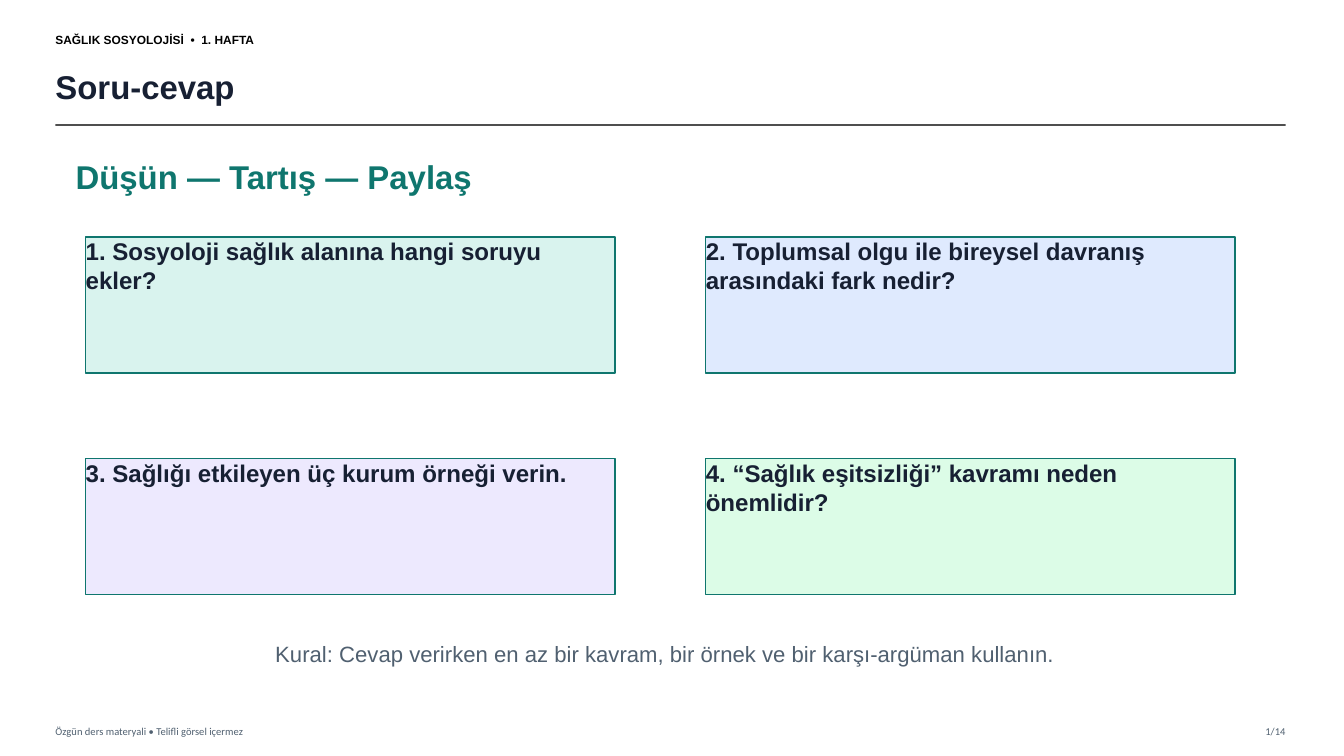
import pptx
import pptx.util
import pptx.dml.color
import pptx.enum.shapes
import pptx.enum.text
import pptx.oxml.ns
import lxml.etree

RGB = pptx.dml.color.RGBColor
ALIGN = pptx.enum.text.PP_ALIGN
ANCHOR = pptx.enum.text.MSO_ANCHOR
qn = pptx.oxml.ns.qn

BLACK = RGB(0x00, 0x00, 0x00)
NAVY = RGB(0x17, 0x20, 0x33)
TEAL = RGB(0x0F, 0x76, 0x6E)
SLATE = RGB(0x50, 0x60, 0x70)
GRAY = RGB(0x33, 0x33, 0x33)
MINT = RGB(0xD9, 0xF3, 0xEE)
BLUE = RGB(0xDF, 0xEA, 0xFE)
LILAC = RGB(0xED, 0xE9, 0xFE)
GREEN = RGB(0xDC, 0xFC, 0xE7)

# Formats: font name, size in points, weight and colour
STYLES = {
    "course": {"name": "Arial", "size": 8.5, "bold": True, "color": BLACK},
    "title": {"name": "Arial", "size": 23.5, "bold": True, "color": NAVY},
    "head": {"name": "Arial", "size": 23.5, "bold": True, "color": TEAL},
    "card": {"name": "Arial", "size": 17.2, "bold": True, "color": NAVY},
    "rule": {"name": "Arial", "size": 15.8, "bold": False, "color": SLATE},
    "foot": {"name": "Calibri", "size": 7.5, "bold": False, "color": SLATE},
}

# Labels: text, box in px, style, alignment, anchor
LABELS = [
    ("SAĞLIK SOSYOLOJİSİ  •  1. HAFTA", (55, 25, 360, 28),
     "course", ALIGN.LEFT, ANCHOR.MIDDLE),
    ("Soru-cevap", (55, 58, 1195, 55), "title", ALIGN.LEFT, ANCHOR.MIDDLE),
    ("Özgün ders materyali • Telifli görsel içermez", (55, 714, 600, 22),
     "foot", ALIGN.LEFT, ANCHOR.MIDDLE),
    ("1/14", (1210, 714, 65, 22), "foot", ALIGN.RIGHT, ANCHOR.MIDDLE),
    ("Düşün — Tartış — Paylaş", (75, 155, 570, 50),
     "head", ALIGN.LEFT, ANCHOR.TOP),
    ("Kural: Cevap verirken en az bir kavram, bir örnek ve bir "
     "karşı-argüman kullanın.", (100, 635, 1120, 35),
     "rule", ALIGN.CENTER, ANCHOR.TOP),
]

# Question cards, row by row
CARDS = [
    ("1. Sosyoloji sağlık alanına hangi soruyu ekler?", MINT),
    ("2. Toplumsal olgu ile bireysel davranış arasındaki fark nedir?", BLUE),
    ("3. Sağlığı etkileyen üç kurum örneği verin.", LILAC),
    ("4. “Sağlık eşitsizliği” kavramı neden önemlidir?", GREEN),
]
COLS = 2
LEFT, TOP = 85, 235
WIDE, HIGH = 525, 135
STEP_X, STEP_Y = 615, 220


def px(*vals):
    """Turn px (100 to the inch) into EMU."""
    return [pptx.util.Emu(v * 9144) for v in vals]


def write(shape, text, style, align, anchor):
    frame = shape.text_frame
    margins = dict.fromkeys(
        ("margin_left", "margin_top", "margin_right", "margin_bottom"), 0)
    for key, val in {**margins, "word_wrap": True,
                     "vertical_anchor": anchor}.items():
        setattr(frame, key, val)
    para = frame.paragraphs[0]
    para.alignment = align
    run = para.add_run()
    run.text = text
    for key, val in STYLES[style].items():
        if key == "color":
            run.font.color.rgb = val
        else:
            setattr(run.font, key,
                    pptx.util.Pt(val) if key == "size" else val)


def add_rule(slide):
    line = slide.shapes.add_connector(
        pptx.enum.shapes.MSO_CONNECTOR.STRAIGHT, *px(55, 124, 1275, 124))
    line.line.width = pptx.util.Pt(1.2)
    line.line.color.rgb = GRAY
    props = line._element.spPr
    # 85% opacity, no shadow
    tint = props.find(".//" + qn("a:srgbClr"))
    lxml.etree.SubElement(tint, qn("a:alpha")).set("val", "85000")
    lxml.etree.SubElement(props, qn("a:effectLst"))


def add_card(slide, num, text, fill):
    row, col = divmod(num, COLS)
    box = px(LEFT + col * STEP_X, TOP + row * STEP_Y, WIDE, HIGH)
    card = slide.shapes.add_shape(
        pptx.enum.shapes.MSO_SHAPE.RECTANGLE, *box)
    card.shadow.inherit = False
    card.fill.solid()
    card.fill.fore_color.rgb = fill
    card.line.color.rgb = TEAL
    card.line.width = pptx.util.Pt(1)
    write(card, text, "card", ALIGN.LEFT, ANCHOR.TOP)


def main():
    deck = pptx.Presentation()
    deck.slide_width, deck.slide_height = px(1333, 750)
    slide = deck.slides.add_slide(deck.slide_layouts[6])

    # Header rule and labels
    add_rule(slide)
    for text, box, style, align, anchor in LABELS:
        label = slide.shapes.add_textbox(*px(*box))
        write(label, text, style, align, anchor)

    # Card grid
    for num, (text, fill) in enumerate(CARDS):
        add_card(slide, num, text, fill)

    deck.save("out.pptx")


if __name__ == "__main__":
    main()
